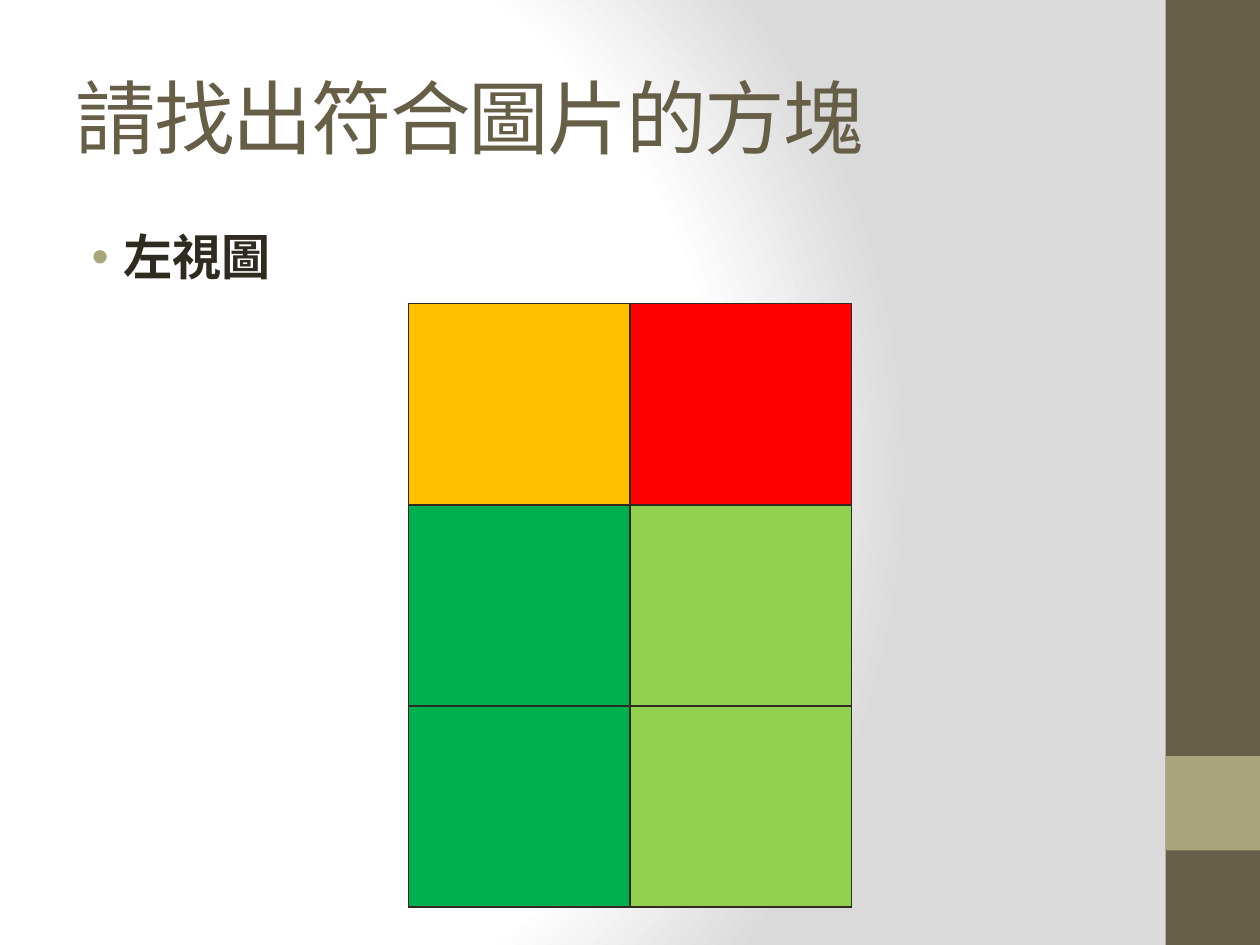
from lxml import etree
from pptx import Presentation
from pptx.dml.color import RGBColor
from pptx.enum.shapes import MSO_SHAPE
from pptx.enum.text import MSO_ANCHOR
from pptx.oxml import parse_xml
from pptx.oxml.ns import qn
from pptx.util import Inches, Pt

RECT = MSO_SHAPE.RECTANGLE
TOP, MID = MSO_ANCHOR.TOP, MSO_ANCHOR.MIDDLE
NS = "http://schemas.openxmlformats.org/drawingml/2006/main"
WIDE, HIGH = 10, 7.5
HUES = {"brown": "675E47", "khaki": "A9A57C", "ink": "2F2B20",
        "white": "FFFFFF", "grey": "DADADA", "amber": "FFC000",
        "red": "FF0000", "green": "00B050", "lime": "92D050"}
TILES = [("amber", "red"), ("green", "lime"), ("green", "lime")]
STOPS = [(0, "white"), (75, "white"), (100, "grey")]
HEAD = {"name": "Cambria", "size": Pt(46), "bold": False}
ITEM = {"name": "Calibri", "size": Pt(28), "bold": True}


def rgb(hue):
    """Return the named colour."""
    return RGBColor.from_string(HUES[hue])


def place(*box):
    """Turn shares of the slide's size into lengths."""
    return [Inches(part * side) for part, side in zip(box, (WIDE, HIGH) * 2)]


def backdrop(slide):
    """Fill the background with a round gradient."""
    slide.background.fill.solid()
    stops = "".join(
        f'<a:gs pos="{pos * 1000}"><a:srgbClr val="{HUES[hue]}"/></a:gs>'
        for pos, hue in STOPS)
    grad = parse_xml(
        f'<a:gradFill xmlns:a="{NS}" rotWithShape="1"><a:gsLst>{stops}</a:gsLst>'
        '<a:path path="circle"><a:fillToRect l="20000" t="50000" '
        'r="100000" b="50000"/></a:path></a:gradFill>')
    old = slide.element.find(".//" + qn("p:bgPr")).find(qn("a:solidFill"))
    old.getparent().replace(old, grad)


def band(slide, box, hue):
    """Draw one plain block of the side bar."""
    shape = slide.shapes.add_shape(RECT, *place(*box))
    shape.shadow.inherit = False
    shape.fill.solid()
    shape.fill.fore_color.rgb = rgb(hue)
    shape.line.fill.background()


def words(slide, box, text, look, hue, anchor):
    """Write one line of text and return its paragraph."""
    frame = slide.shapes.add_textbox(*place(*box)).text_frame
    frame.word_wrap = True
    frame.vertical_anchor = anchor
    para = frame.paragraphs[0]
    run = para.add_run()
    run.text = text
    for key, val in look.items():
        setattr(run.font, key, val)
    run.font.color.rgb = rgb(hue)
    return para


def title(slide, box, text):
    """Write the heading with tight letters."""
    para = words(slide, box, text, HEAD, "brown", MID)
    para.runs[0].font._element.set("spc", "-100")


def bullet(slide, box, text):
    """Write the bulleted item."""
    para = words(slide, box, text, ITEM, "ink", TOP)
    para.space_before = Pt(0.2 * 28)
    props = para._p.get_or_add_pPr()
    props.set("marL", str(Inches(0.38)))
    props.set("indent", str(Inches(-0.25)))
    tint = etree.SubElement(props, qn("a:buClr"))
    etree.SubElement(tint, qn("a:srgbClr"), val=HUES["khaki"])
    etree.SubElement(props, qn("a:buFont"), typeface="Arial")
    etree.SubElement(props, qn("a:buChar"), char="•")


def border(cell):
    """Rule all four sides of a cell."""
    props = cell._tc.get_or_add_tcPr()
    for side in "LRTB":
        line = etree.SubElement(props, qn("a:ln" + side), w=str(Pt(1)))
        fill = etree.SubElement(line, qn("a:solidFill"))
        etree.SubElement(fill, qn("a:srgbClr"), val=HUES["ink"])


def blocks(slide, box):
    """Lay out the coloured tiles as a table."""
    table = slide.shapes.add_table(
        len(TILES), len(TILES[0]), *place(*box)).table
    table.first_row = table.horz_banding = False
    for row, hues in enumerate(TILES):
        for col, hue in enumerate(hues):
            cell = table.cell(row, col)
            border(cell)
            cell.fill.solid()
            cell.fill.fore_color.rgb = rgb(hue)


def main():
    """Build and save the slide."""
    deck = Presentation()
    deck.slide_width, deck.slide_height = Inches(WIDE), Inches(HIGH)
    slide = deck.slides.add_slide(deck.slide_layouts[6])
    backdrop(slide)
    band(slide, (0.925, 0, 0.075, 1), "brown")
    band(slide, (0.925, 0.8, 0.075, 0.1), "khaki")
    title(slide, (0.05, 0.04, 0.833, 1 / 6), "請找出符合圖片的方塊")
    bullet(slide, (0.05, 7 / 30, 0.833, 0.7), "左視圖")
    blocks(slide, (0.324, 2.41 / HIGH, 0.352, 4.79 / HIGH))
    deck.save("out.pptx")


if __name__ == "__main__":
    main()
